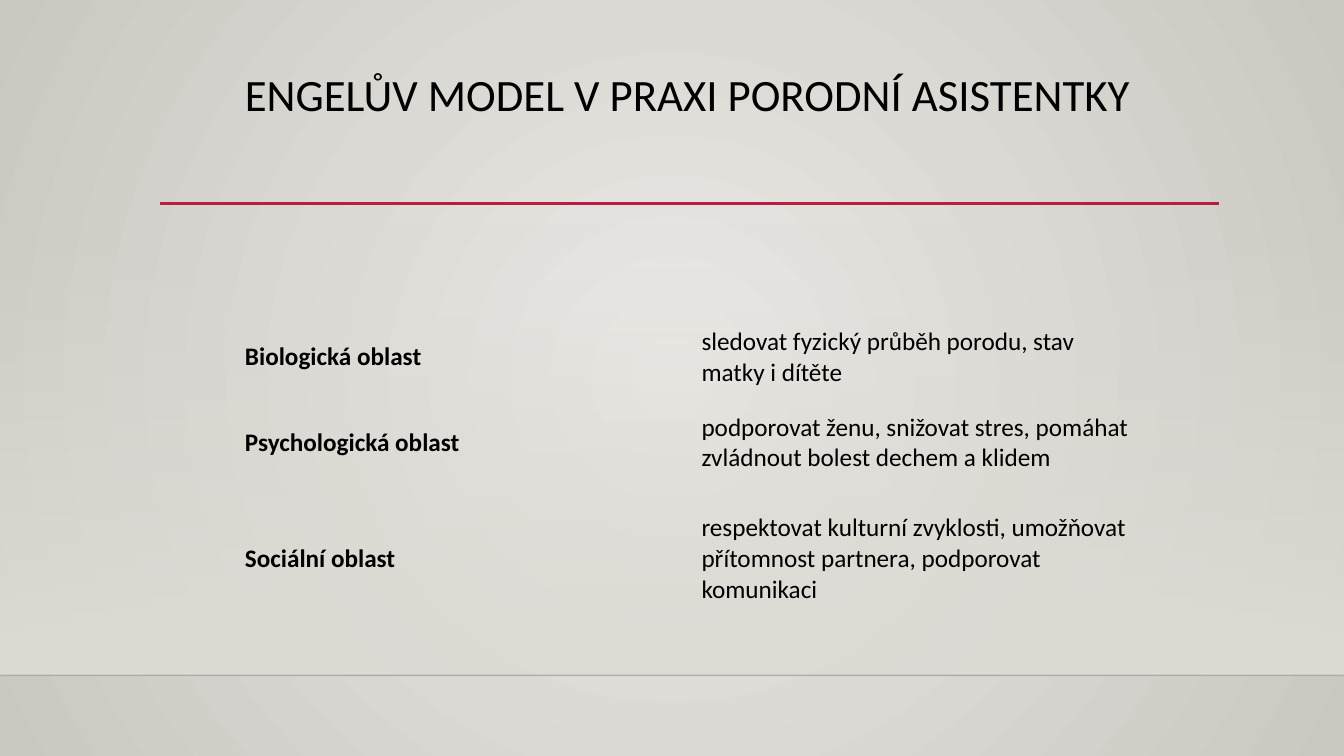
from lxml import etree
from pptx import Presentation
from pptx.dml.color import RGBColor
from pptx.enum.shapes import MSO_CONNECTOR, MSO_SHAPE
from pptx.enum.text import MSO_ANCHOR
from pptx.oxml.ns import qn
from pptx.util import Cm, Pt

STRAIGHT = MSO_CONNECTOR.STRAIGHT
RECTANGLE = MSO_SHAPE.RECTANGLE
TOP = MSO_ANCHOR.TOP
MIDDLE = MSO_ANCHOR.MIDDLE

WIDTH, HEIGHT = 33.87, 19.05
FLOOR_TOP = 17.02
TEXT_LEFT = 5.92
PLAIN_TABLE_STYLE = "{2D5ABB26-0587-4C30-8999-92F81FD0307C}"
COLORS = {
    "center": "ECEAE7",
    "edge": "CAC7C1",
    "wall": "DFDBD5",
    "floor_line": "000001",
    "accent": "B71E42",
    "text": "000000",
}
AREAS = [
    ("Biologická oblast", "sledovat fyzický průběh porodu, stav matky i dítěte"),
    ("Psychologická oblast",
     "podporovat ženu, snižovat stres, pomáhat zvládnout bolest dechem a klidem"),
    ("Sociální oblast",
     "respektovat kulturní zvyklosti, umožňovat přítomnost partnera, podporovat komunikaci"),
]
ROW_HEIGHTS = [1.02, 1.78, 2.54, 3.3]


def color(name):
    return RGBColor.from_string(COLORS[name])


def set_opacity(color_element, percent):
    etree.SubElement(color_element, qn("a:alpha"), val=str(percent * 1000))


class SlideBuilder:
    """Holds the text style and the page being filled."""

    def __init__(self, page, font="Calibri"):
        self.page = page
        self.font = font

    def gradient(self, fill, first, last):
        fill.gradient()
        for stop, name in zip(fill.gradient_stops, (first, last)):
            stop.color.rgb = color(name)

    def background(self, center, edge):
        """Fill the page with a gradient spreading in circles from its centre."""
        self.gradient(self.page.background.fill, center, edge)
        gradient = next(self.page.element.iter(qn("a:gradFill")))
        gradient.remove(gradient.find(qn("a:lin")))
        circle = etree.SubElement(gradient, qn("a:path"), {"path": "circle"})
        etree.SubElement(circle, qn("a:fillToRect"),
                         dict.fromkeys("ltrb", "50000"))

    def fading_band(self, left, top, width, height, name):
        """Add a rectangle that is clear at its top and solid at its bottom."""
        band = self.page.shapes.add_shape(
            RECTANGLE, Cm(left), Cm(top), Cm(width), Cm(height))
        band.shadow.inherit = False
        band.line.fill.background()
        self.gradient(band.fill, name, name)
        band.fill.gradient_angle = 270
        set_opacity(next(band.element.iter(qn("a:srgbClr"))), 0)

    def rule(self, left, right, y, name, weight, opacity=100):
        line = self.page.shapes.add_connector(
            STRAIGHT, Cm(left), Cm(y), Cm(right), Cm(y))
        line.line.color.rgb = color(name)
        line.line.width = Pt(weight)
        if opacity < 100:
            set_opacity(next(line.element.iter(qn("a:srgbClr"))), opacity)
        etree.SubElement(line.element.spPr, qn("a:effectLst"))

    def add_span(self, frame, text, size, bold=False):
        para = frame.paragraphs[0]
        span = para.add_run()
        span.text = text
        span.font.name = self.font
        span.font.size = Pt(size)
        span.font.bold = bold
        span.font.color.rgb = color("text")
        return para

    def title(self, left, top, width, height, text):
        box = self.page.shapes.add_textbox(Cm(left), Cm(top), Cm(width), Cm(height))
        frame = box.text_frame
        frame.word_wrap = True
        frame.vertical_anchor = TOP
        self.add_span(frame, text, 32).line_spacing = 0.9

    def table(self, left, top, width, row_heights, rows):
        table = self.page.shapes.add_table(
            len(rows), len(rows[0]), Cm(left), Cm(top), Cm(width),
            Cm(sum(row_heights))).table
        table.first_row = table.horz_banding = False
        next(table._tbl.iter(qn("a:tableStyleId"))).text = PLAIN_TABLE_STYLE
        for row, height, texts in zip(table.rows, row_heights, rows):
            row.height = Cm(height)
            for index, (cell, text) in enumerate(zip(row.cells, texts)):
                cell.fill.background()
                cell.vertical_anchor = MIDDLE
                if text:
                    self.add_span(cell.text_frame, text, 18, bold=index == 0)


def main():
    deck = Presentation()
    deck.slide_width, deck.slide_height = Cm(WIDTH), Cm(HEIGHT)
    page = deck.slides.add_slide(deck.slide_layouts[6])
    builder = SlideBuilder(page)
    builder.background("center", "edge")
    builder.fading_band(0, 5.61, WIDTH, FLOOR_TOP - 5.61, "wall")
    builder.rule(0, WIDTH, FLOOR_TOP, "floor_line", 1, opacity=20)
    builder.rule(4.04, 30.73, 5.13, "accent", 2.5)
    builder.title(TEXT_LEFT, 1.7, 23.7, 3.66,
                  "ENGELŮV MODEL V PRAXI PORODNÍ ASISTENTKY")
    builder.table(TEXT_LEFT, 7.09, 23.01, ROW_HEIGHTS, [("", ""), *AREAS])
    deck.save("out.pptx")


if __name__ == "__main__":
    main()
